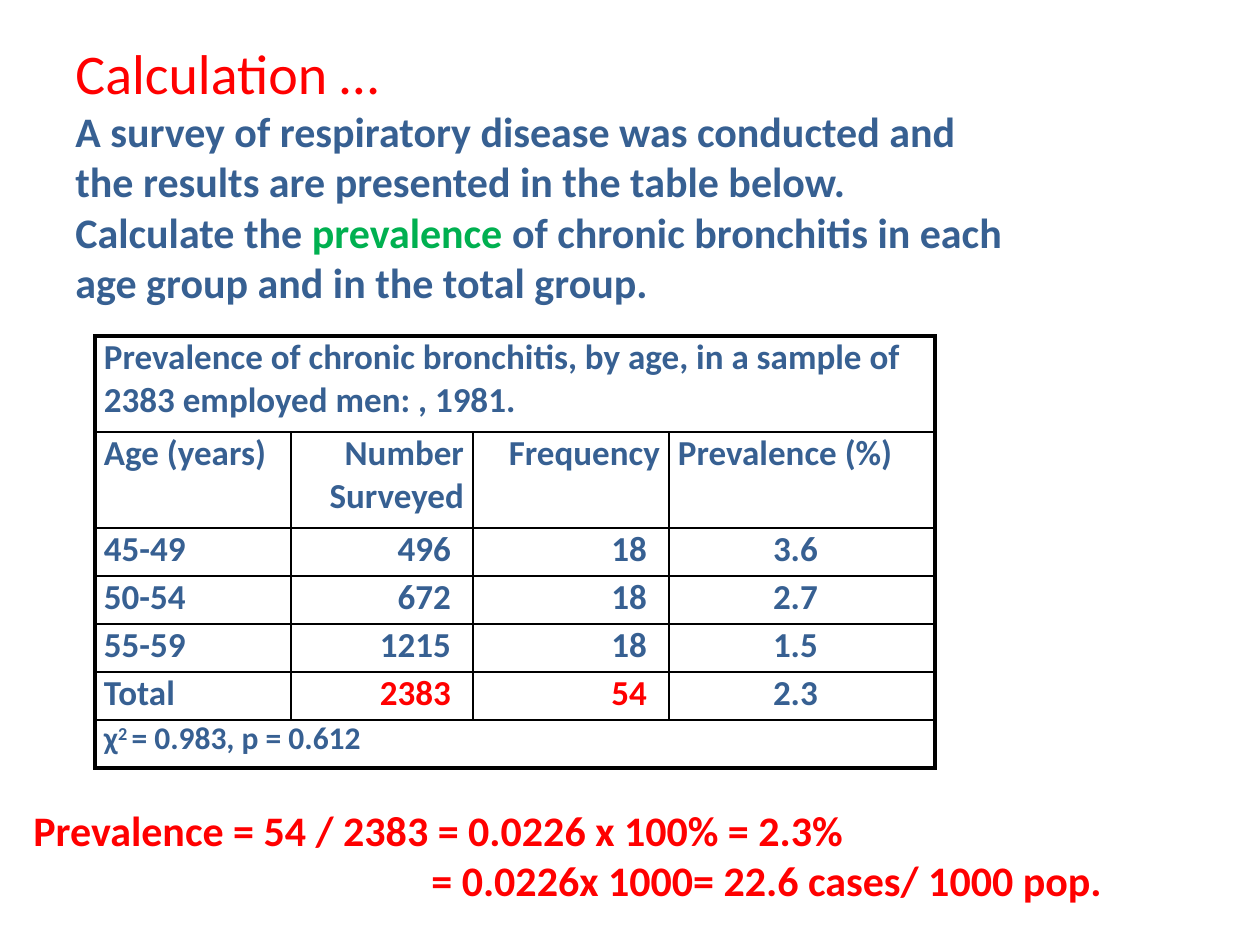
from lxml.etree import SubElement
from pptx import Presentation
from pptx.dml.color import RGBColor
from pptx.enum.text import MSO_ANCHOR as Anchor, PP_ALIGN as Align
from pptx.oxml.ns import qn
from pptx.util import Pt

PX = 914400 / 126  # EMU in one px
BLUE = RGBColor(0x37, 0x60, 0x92)
RED = RGBColor(0xFF, 0x00, 0x00)
GREEN = RGBColor(0x00, 0xB0, 0x50)
BLACK = RGBColor(0x00, 0x00, 0x00)

SURVEY = [
    ["Age (years)", "Number Surveyed", "Frequency", "Prevalence (%)"],
    ["45-49", "496", "18", "3.6"],
    ["50-54", "672", "18", "2.7"],
    ["55-59", "1215", "18", "1.5"],
    ["Total", "2383", "54", "2.3"],
]
CAPTION = ("Prevalence of chronic bronchitis, by age, in a sample of "
           "2383 employed men: , 1981.")


def px(length):
    return round(length * PX)


class SlideBuilder:
    font = {"name": "Calibri", "bold": True}
    cell_margin, number_margin = 9, 22
    inner_line, outer_line = 1, 2.25

    def __init__(self, slide):
        self.slide = slide

    def add_runs(self, paragraph, runs, size, color):
        """Each run is a string or a pair of a string and its own format."""
        for item in runs:
            words, special = (item, {}) if isinstance(item, str) else item
            run = paragraph.add_run()
            run.text = words
            values = {**self.font, "size": Pt(size), "color": color, **special}
            run.font.color.rgb = values.pop("color")
            baseline = values.pop("baseline", None)
            if baseline:
                run._r.get_or_add_rPr().set("baseline", str(baseline))
            for name, value in values.items():
                setattr(run.font, name, value)

    def text_box(self, left, top, width, height, paragraphs):
        """Each paragraph is runs, size, colour and left indent."""
        shape = self.slide.shapes.add_textbox(*map(px, (left, top, width, height)))
        frame = shape.text_frame
        frame.word_wrap = True
        for index, (runs, size, color, indent) in enumerate(paragraphs):
            paragraph = frame.add_paragraph() if index else frame.paragraphs[0]
            if indent:
                paragraph._p.get_or_add_pPr().set("marL", str(px(indent)))
            self.add_runs(paragraph, runs, size, color)

    def table(self, left, top, widths, heights):
        frame = self.slide.shapes.add_table(
            len(heights), len(widths), px(left), px(top),
            px(sum(widths)), px(sum(heights)))
        table = frame.table
        table.first_row = table.horz_banding = False
        for column, width in zip(table.columns, widths):
            column.width = px(width)
        for row, height in zip(table.rows, heights):
            row.height = px(height)
        return table

    def borders(self, cell, outer):
        properties = cell._tc.get_or_add_tcPr()
        for side in "LRTB":
            width = self.outer_line if side in outer else self.inner_line
            line = SubElement(properties, qn(f"a:ln{side}"), w=str(int(Pt(width))))
            fill = SubElement(line, qn("a:solidFill"))
            SubElement(fill, qn("a:srgbClr"), val=str(BLACK))

    def cell(self, cell, runs, outer, size=20, color=BLUE, align=Align.LEFT,
             right=cell_margin):
        self.borders(cell, outer)
        cell.fill.background()
        margins = {"margin_left": px(self.cell_margin), "margin_right": px(right),
                   "margin_top": 0, "margin_bottom": 0,
                   "vertical_anchor": Anchor.TOP}
        for name, value in margins.items():
            setattr(cell, name, value)
        paragraph = cell.text_frame.paragraphs[0]
        paragraph.alignment = align
        self.add_runs(paragraph, runs, size, color)


def main():
    presentation = Presentation()
    presentation.slide_width, presentation.slide_height = px(1260), px(945)
    slide = presentation.slides.add_slide(presentation.slide_layouts[6])
    builder = SlideBuilder(slide)

    # Survey table
    table = builder.table(95, 336, [196, 182, 196, 266], [96, 96] + [48] * 5)
    last_row, last_column = len(table.rows) - 1, len(table.columns) - 1
    for row, values in enumerate(SURVEY, start=1):
        for column, value in enumerate(values):
            header = row == 1
            align = [Align.LEFT, Align.RIGHT, Align.RIGHT,
                     Align.LEFT if header else Align.CENTER][column]
            is_total = values[0] == "Total" and column in (1, 2)
            number = column > 0 and not header
            builder.cell(
                table.cell(row, column), [value],
                outer={0: "L", last_column: "R"}.get(column, ""),
                color=RED if is_total else BLUE, align=align,
                right=builder.number_margin if number else builder.cell_margin)

    # Caption and test result span the whole width
    result = ["χ", ("2 ", {"baseline": 30000}), "= 0.983, p = 0.612"]
    for row, runs, size, outer in ((0, [CAPTION], 20, "LRT"),
                                   (last_row, result, 18, "LRB")):
        first = table.cell(row, 0)
        first.merge(table.cell(row, last_column))
        builder.cell(first, runs, outer, size)
        for column in range(1, last_column + 1):
            builder.borders(table.cell(row, column), outer)

    # Title and task
    builder.text_box(63, 32, 966, 360, [
        ([("Calculation …", {"bold": False})], 32, RED, 0),
        (["A survey of respiratory disease was conducted and the results are "
          "presented in the table below."], 24, BLUE, 0),
        (["Calculate the ", ("prevalence", {"color": GREEN}),
          " of chronic bronchitis in each age group and in the total group."],
         24, BLUE, 0),
    ])

    # Worked answer
    builder.text_box(21, 798, 1102, 174, [
        (["Prevalence = 54 / 2383 = 0.0226 x 100% = 2.3%"], 24, RED, 0),
        (["= 0.0226x 1000= 22.6 cases/ 1000 pop."], 24, RED, 398),
    ])

    presentation.save("out.pptx")


if __name__ == "__main__":
    main()
